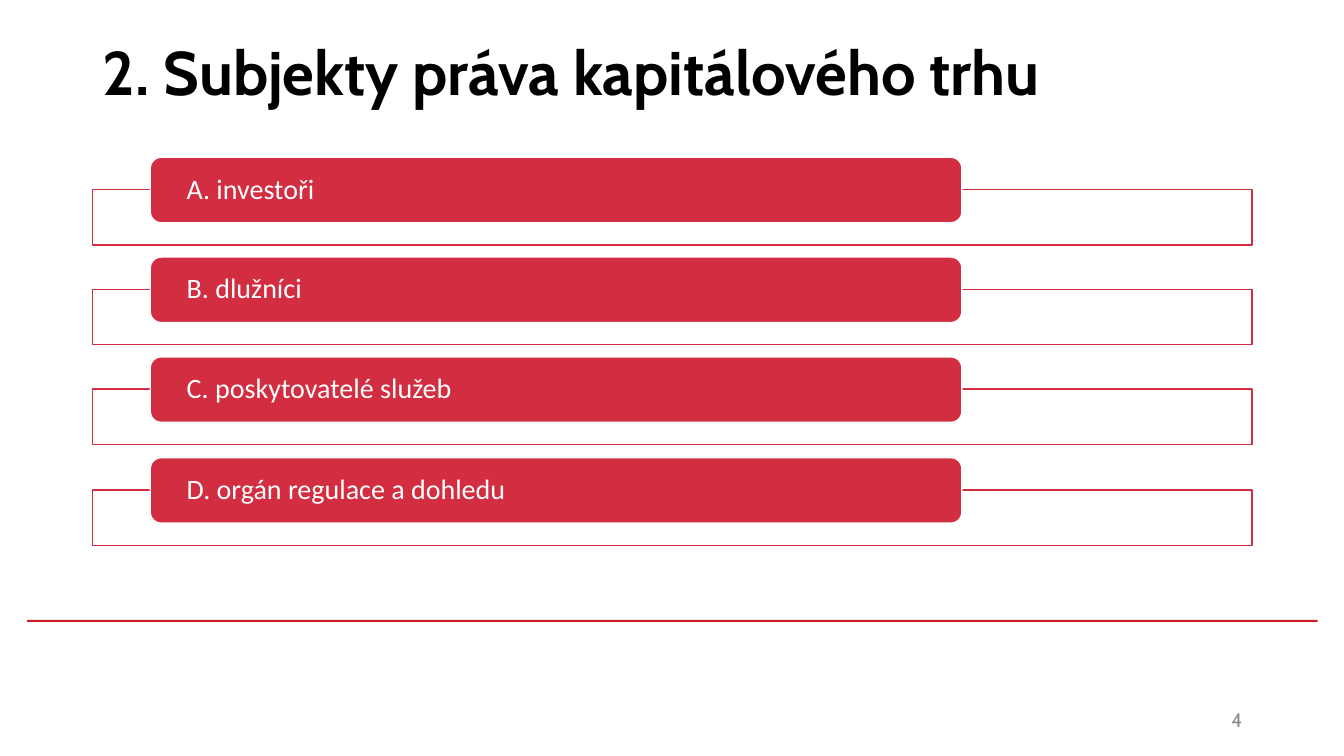
from dataclasses import dataclass

from lxml.etree import SubElement
from pptx import Presentation
from pptx.dml.color import RGBColor
from pptx.enum.shapes import MSO_SHAPE
from pptx.enum.text import MSO_ANCHOR, MSO_AUTO_SIZE, PP_ALIGN
from pptx.oxml.ns import qn
from pptx.util import Emu, Pt

SCALE = 9144  # EMU in one px, 100 px to the inch
COLORS = {"red": "D22D40", "rule": "CD1F21", "white": "FFFFFF",
          "black": "000000", "gray": "8C8C8C"}


@dataclass(frozen=True)
class Box:
    left: int
    top: int
    width: int
    height: int

    def down(self, step: int) -> "Box":
        return Box(self.left, self.top + step, self.width, self.height)

    def emu(self) -> list[Emu]:
        return [px(n) for n in (self.left, self.top, self.width, self.height)]


@dataclass(frozen=True)
class Style:
    font: str
    size: int
    color: str
    bold: bool = False
    align: PP_ALIGN = PP_ALIGN.LEFT


TITLE = Style("Cabin", 44, "black", bold=True)
LABEL = Style("Calibri", 20, "white")
NUMBER = Style("Cabin", 14, "gray", align=PP_ALIGN.RIGHT)

FRAME = Box(92, 188, 1150, 55)
PILL = Box(149, 156, 805, 65)
SPAN = 298  # from the first row to the last
ROWS = ["A. investoři", "B. dlužníci", "C. poskytovatelé služeb",
        "D. orgán regulace a dohledu"]


def px(count: int) -> Emu:
    return Emu(count * SCALE)


def color(name: str) -> RGBColor:
    return RGBColor.from_string(COLORS[name])


def write(shape, text: str, style: Style) -> None:
    frame = shape.text_frame
    frame.text = text
    frame.word_wrap = True
    frame.auto_size = MSO_AUTO_SIZE.NONE
    frame.vertical_anchor = MSO_ANCHOR.MIDDLE
    line = frame.paragraphs[0]
    line.alignment = style.align
    line.line_spacing = 0.9
    for run in line.runs:
        run.font.name = style.font
        run.font.size = Pt(style.size)
        run.font.bold = style.bold
        run.font.color.rgb = color(style.color)


def draw(slide, kind: MSO_SHAPE, box: Box, fill: str, edge: str = ""):
    shape = slide.shapes.add_shape(kind, *box.emu())
    shape.shadow.inherit = False
    shape.fill.solid()
    shape.fill.fore_color.rgb = color(fill)
    if edge:
        shape.line.color.rgb = color(edge)
        shape.line.width = Pt(1)
    else:
        shape.line.fill.background()
    return shape


def fade(shape, percent: int) -> None:
    tint = shape.fill._xPr.find(qn("a:solidFill"))[0]
    SubElement(tint, qn("a:alpha")).set("val", str(percent * 1000))


def row(slide, text: str, step: int) -> None:
    frame = draw(slide, MSO_SHAPE.RECTANGLE, FRAME.down(step), "white", "red")
    fade(frame, 90)
    pill = draw(slide, MSO_SHAPE.ROUNDED_RECTANGLE, PILL.down(step),
                "red", "white")
    write(pill, text, LABEL)
    inner = pill.text_frame
    inner.margin_left = inner.margin_right = px(33)
    inner.margin_top = inner.margin_bottom = px(3)


def main() -> None:
    deck = Presentation()
    deck.slide_width, deck.slide_height = px(1333), px(750)
    slide = deck.slides.add_slide(deck.slide_layouts[5])

    # Title
    title = slide.shapes.title
    title.left, title.top, title.width, title.height = Box(92, 2, 1150, 145).emu()
    write(title, "2. Subjekty práva kapitálového trhu", TITLE)

    # List of subjects
    for i, text in enumerate(ROWS):
        row(slide, text, SPAN * i // (len(ROWS) - 1))

    # Footer rule and page number
    draw(slide, MSO_SHAPE.RECTANGLE, Box(27, 615, 1280, 2), "rule")
    number = slide.shapes.add_textbox(*Box(942, 695, 300, 40).emu())
    write(number, "4", NUMBER)

    deck.save("out.pptx")


if __name__ == "__main__":
    main()
